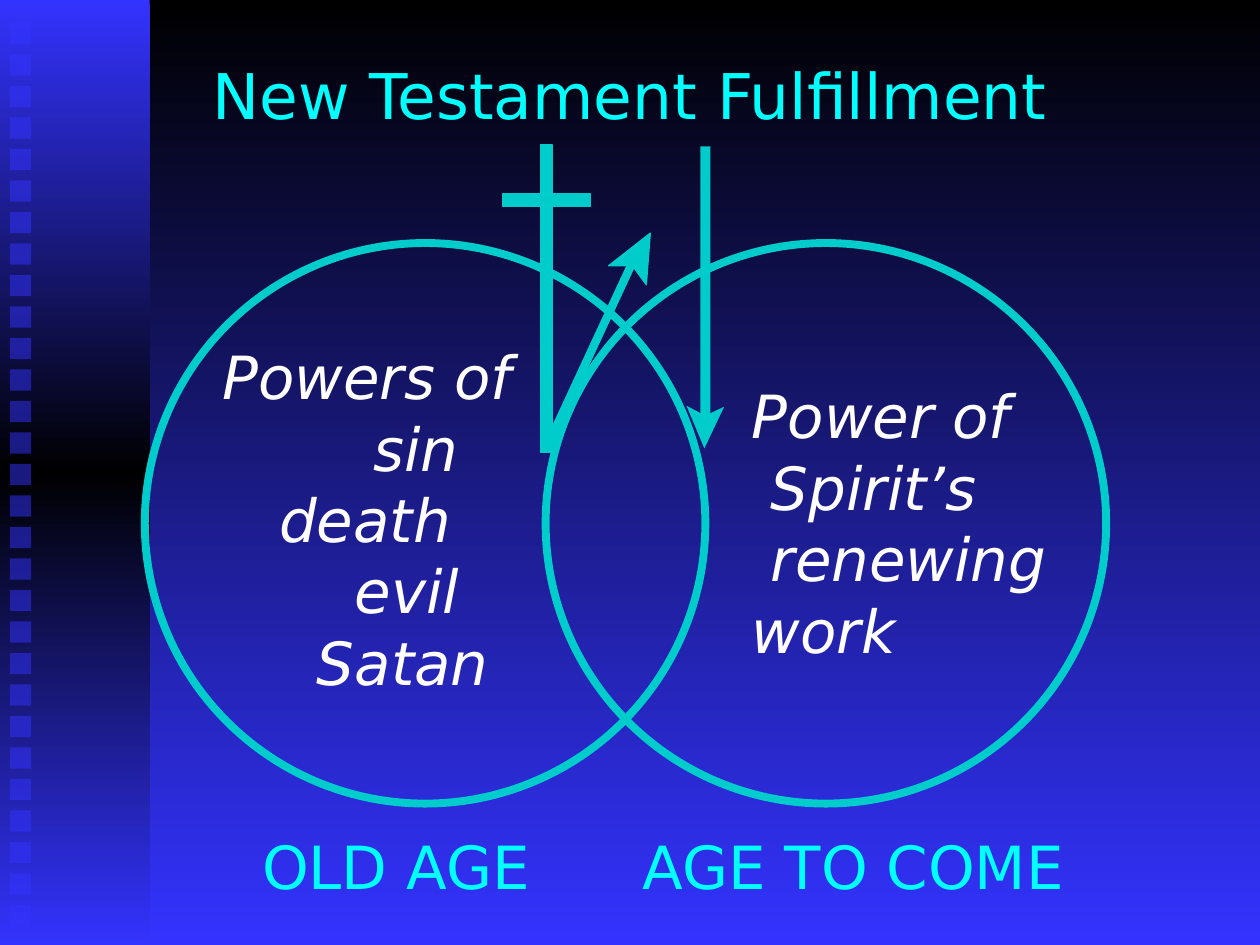
from lxml import etree
from pptx import Presentation
from pptx.dml.color import RGBColor
from pptx.enum import shapes, text
from pptx.oxml import ns
from pptx.util import Cm, Pt

BLACK = RGBColor(0x00, 0x00, 0x00)
BLUE = RGBColor(0x33, 0x33, 0xFF)
TEAL = RGBColor(0x00, 0xCC, 0xCC)
CYAN = RGBColor(0x00, 0xFF, 0xFF)
WHITE = RGBColor(0xFF, 0xFF, 0xFF)
FONT = "DejaVu Sans"
WIDTH, HEIGHT = 25.4, 19.05
INDENT_STEP = 0.38
CIRCLE_SIZE = 11.3


def add_child(parent, tag, **attributes):
    """Append a DrawingML element to a parent."""
    return etree.SubElement(parent, ns.qn(tag), attributes)


def set_gradient(fill, element, colors):
    """Fill downwards with evenly spaced colour stops."""
    fill.gradient()
    fill.gradient_angle = 270
    stop_list = element.find(".//" + ns.qn("a:gsLst"))
    for stop in list(stop_list):
        stop_list.remove(stop)
    for index, color in enumerate(colors):
        position = 100000 * index // (len(colors) - 1)
        stop = add_child(stop_list, "a:gs", pos=str(position))
        add_child(stop, "a:srgbClr", val=str(color))


def style_shape(shape, fill=None, line=None, line_width=0.75):
    """Set the fill and outline of a shape and drop its shadow."""
    shape.shadow.inherit = False
    if fill is None:
        shape.fill.background()
    else:
        shape.fill.solid()
        shape.fill.fore_color.rgb = fill
    if line is None:
        shape.line.fill.background()
    else:
        shape.line.color.rgb = line
        shape.line.width = Pt(line_width)
    return shape


def add_preset(slide, kind, left, top, width, height, **style):
    """Add a styled preset shape."""
    shape = slide.shapes.add_shape(kind, Cm(left), Cm(top), Cm(width), Cm(height))
    return style_shape(shape, **style)


def add_rectangle(slide, left, top, width, height, **style):
    """Add a styled rectangle."""
    return add_preset(slide, shapes.MSO_SHAPE.RECTANGLE, left, top, width, height, **style)


def add_arrowhead(slide, left, top, points, **style):
    """Add a closed outline from points relative to its corner."""
    start, *rest = [(Cm(left + x), Cm(top + y)) for x, y in points]
    builder = slide.shapes.build_freeform(*start)
    builder.add_line_segments(rest, close=True)
    return style_shape(builder.convert_to_shape(), **style)


def add_text(slide, content, left, top, width, height, size=34, color=WHITE,
             italic=False, align=text.PP_ALIGN.LEFT, inset=(0, 0), indents=()):
    """Add a text box with one paragraph for each line of content."""
    box = slide.shapes.add_textbox(Cm(left), Cm(top), Cm(width), Cm(height))
    frame = box.text_frame
    frame.word_wrap = True
    frame.auto_size = text.MSO_AUTO_SIZE.SHAPE_TO_FIT_TEXT
    frame.margin_left = frame.margin_right = Cm(inset[0])
    frame.margin_top = frame.margin_bottom = Cm(inset[1])
    frame.text = content
    for paragraph in frame.paragraphs:
        paragraph.alignment = align
        font = paragraph.runs[0].font
        font.name, font.size, font.italic = FONT, Pt(size), italic
        font.color.rgb = color
    for paragraph, steps in zip(frame.paragraphs, indents):
        paragraph._p.get_or_add_pPr().set("marL", str(Cm(steps * INDENT_STEP)))


def add_side_band(slide, left, top, width, height):
    """Draw the gradient band with its column of squares."""
    band = add_rectangle(slide, left, top, width, height)
    set_gradient(band.fill, band._element, (BLUE, BLACK, BLUE))
    for index in range(29):
        square = add_rectangle(slide, left + 0.2, top + 0.46 + index * 0.635,
                               0.43, 0.43, fill=BLUE)
        color = square._element.spPr.find(".//" + ns.qn("a:srgbClr"))
        add_child(color, "a:alpha", val="50000")


def add_age(slide, left, top, lines, indents, text_box):
    """Draw the circle of an age with the powers at work in it."""
    add_preset(slide, shapes.MSO_SHAPE.OVAL, left, top, CIRCLE_SIZE, CIRCLE_SIZE,
               line=TEAL, line_width=4.5)
    x, y, width, height = text_box
    add_text(slide, "\n".join(lines), left + x, top + y, width, height,
             italic=True, inset=(0.25, 0.13), indents=indents)


def add_cross(slide, left, top):
    """Draw the cross with the arrow rising from its foot."""
    style = {"fill": TEAL, "line": TEAL}
    add_rectangle(slide, left + 0.77, top, 0.23, 6.2, **style)
    add_rectangle(slide, left, top + 0.99, 1.78, 0.25, **style)
    add_arrowhead(slide, left, top,
                  [(2.98, 1.78), (2.9, 2.82), (2.62, 2.44), (2.14, 2.44)], **style)
    line = slide.shapes.add_connector(
        shapes.MSO_CONNECTOR.STRAIGHT, Cm(left + 0.89), Cm(top + 6.1),
        Cm(left + 2.6), Cm(top + 2.41))
    line.line.color.rgb = TEAL
    line.line.width = Pt(4.75)
    add_child(line._element.spPr, "a:effectLst")


def add_descent(slide, left, top):
    """Draw the arrow coming down into the overlap."""
    add_arrowhead(slide, left, top,
                  [(0.36, 6.09), (0, 5.23), (0.38, 5.43), (0.76, 5.25)], fill=TEAL)
    add_rectangle(slide, left + 0.28, top, 0.2, 5.51, fill=TEAL)


def add_heading(slide, content, left, top, width, height, size=34):
    """Add a centred cyan heading."""
    add_text(slide, content, left, top, width, height, size=size, color=CYAN,
             align=text.PP_ALIGN.CENTER)


def main():
    """Build and save the slide."""
    presentation = Presentation()
    presentation.slide_width, presentation.slide_height = Cm(WIDTH), Cm(HEIGHT)
    slide = presentation.slides.add_slide(presentation.slide_layouts[6])
    set_gradient(slide.background.fill, slide._element, (BLACK, BLUE))
    add_side_band(slide, 0, 0, 3.02, HEIGHT)
    add_age(slide, 2.92, 4.9, ("Powers of", "sin", "death", "evil", "Satan"),
            (0, 8, 3, 7, 5), (1.32, 1.83, 7.06, 7.44))
    add_age(slide, 11, 4.9, ("Power of", "Spirit’s", "renewing", "work"),
            (0, 1, 1, 0), (3.91, 2.62, 7.26, 5.99))
    add_cross(slide, 10.13, 2.92)
    add_descent(slide, 13.84, 2.95)
    add_heading(slide, "OLD AGE", 3.68, 16.74, 8.61, 1.45)
    add_heading(slide, "AGE TO COME", 12.9, 16.74, 8.61, 1.45)
    add_heading(slide, "New Testament Fulfillment", 1.09, 1.14, 23.22, 1.52, size=36)
    presentation.save("out.pptx")


if __name__ == "__main__":
    main()
